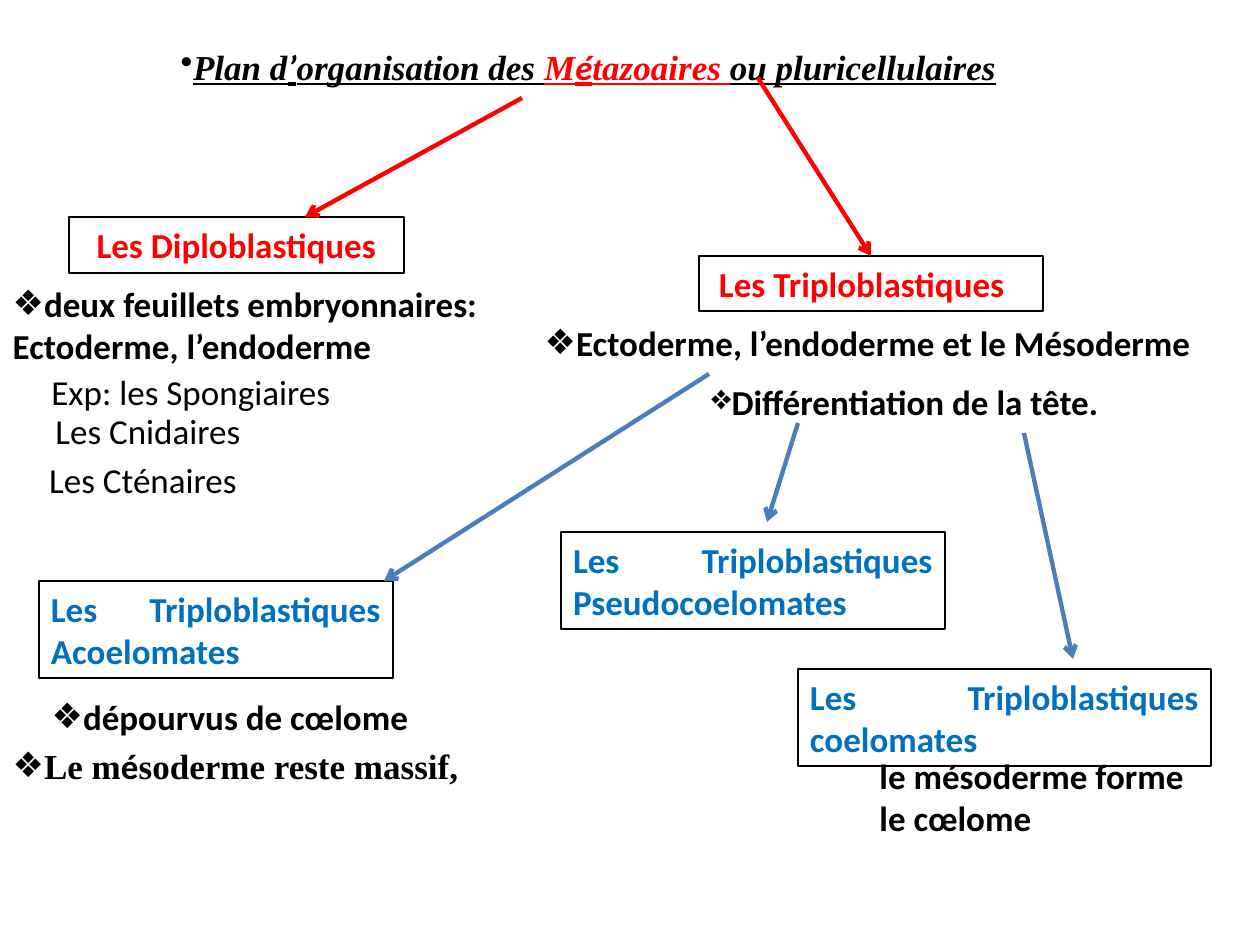
from lxml.etree import SubElement
from pptx import Presentation
from pptx.dml.color import RGBColor
from pptx.enum.shapes import MSO_CONNECTOR, MSO_SHAPE
from pptx.enum.text import MSO_ANCHOR, MSO_AUTO_SIZE, PP_ALIGN
from pptx.oxml.ns import qn
from pptx.util import Emu, Pt

COLORS = {"ink": "000000", "red": "FF0000", "blue": "0070C0",
          "arrow": "4B7EBC", "paper": "FFFFFF"}
SCALE = 914400 / 126
SERIF = "Times New Roman"
SANS = "Calibri"
DIAMOND = "❖"


def px(length):
    return Emu(round(length * SCALE))


def color(name):
    return RGBColor.from_string(COLORS[name])


class SlideBuilder:
    size = Pt(20)

    def __init__(self, page):
        self.page = page

    def set_text(self, box, lines, ink="ink", bold=True, align=PP_ALIGN.LEFT,
                 anchor=MSO_ANCHOR.TOP, wrap=True, bullet=None, decorated=False):
        frame = box.text_frame
        frame.word_wrap = wrap
        frame.auto_size = MSO_AUTO_SIZE.NONE
        frame.vertical_anchor = anchor
        lines = [[(line, ink, SANS)] if isinstance(line, str) else line
                 for line in lines]
        frame.text = "\n".join(spans[0][0] for spans in lines)
        for index, (para, spans) in enumerate(zip(frame.paragraphs, lines)):
            para.alignment = align
            para.line_spacing = 1.0
            para.space_before = para.space_after = Pt(0)
            properties = para._p.get_or_add_pPr()
            properties.set("marL", "0")
            properties.set("indent", "0")
            if bullet and index == 0:
                SubElement(properties, qn("a:buChar")).set("char", bullet)
            else:
                SubElement(properties, qn("a:buNone"))
            for text, _, _ in spans[1:]:
                para.add_run().text = text
            for span, (_, tone, face) in zip(para.runs, spans):
                span.font.name = face
                span.font.size = self.size
                span.font.bold = bold
                span.font.italic = decorated
                span.font.underline = decorated
                span.font.color.rgb = color(tone)
        return box

    def placeholder(self, index, place, lines, **style):
        box = self.page.placeholders[index]
        box.left, box.top, box.width, box.height = map(px, place)
        return self.set_text(box, lines, **style)

    def label(self, place, text, **style):
        box = self.page.shapes.add_textbox(*map(px, place))
        return self.set_text(box, [text], **style)

    def frame(self, place, text, ink="blue", align=PP_ALIGN.JUSTIFY,
              anchor=MSO_ANCHOR.MIDDLE, filled=False, inset=12):
        box = self.page.shapes.add_shape(MSO_SHAPE.RECTANGLE, *map(px, place))
        box.shadow.inherit = False
        if filled:
            box.fill.solid()
            box.fill.fore_color.rgb = color("paper")
        else:
            box.fill.background()
        box.line.color.rgb = color("ink")
        box.line.width = Pt(0.75)
        box.text_frame.margin_left = px(inset)
        return self.set_text(box, [text], ink=ink, align=align, anchor=anchor)

    def arrow(self, start, end, tone="arrow", target=None):
        link = self.page.shapes.add_connector(
            MSO_CONNECTOR.STRAIGHT, *map(px, start + end))
        link.line.color.rgb = color(tone)
        link.line.width = Pt(2.5)
        SubElement(link.line._get_or_add_ln(), qn("a:tailEnd")).set("type", "arrow")
        SubElement(link._element.spPr, qn("a:effectLst"))
        if target is not None:
            link.end_connect(target, 0)


def main():
    deck = Presentation()
    deck.slide_width, deck.slide_height = px(1260), px(945)
    builder = SlideBuilder(deck.slides.add_slide(deck.slide_layouts[4]))

    title = [("Plan d", "ink", SERIF), ("’", "ink", SANS),
             ("organisation des ", "ink", SERIF), ("M", "red", SERIF),
             ("é", "red", SANS), ("tazoaires ", "red", SERIF),
             ("ou pluricellulaires", "ink", SERIF)]
    builder.placeholder(0, (168, 39, 984, 55), [title], bullet="•",
                        anchor=MSO_ANCHOR.MIDDLE, decorated=True)

    massive = [("Le m", "ink", SERIF), ("é", "ink", SANS),
               ("soderme reste massif,", "ink", SERIF)]
    lists = [
        ((0, 276, 501, 98), ["deux feuillets embryonnaires:",
                             "Ectoderme, l’endoderme"]),
        ((532, 315, 679, 55), ["Ectoderme, l’endoderme et le Mésoderme"]),
        ((39, 689, 386, 55), ["dépourvus de cœlome"]),
        ((0, 738, 493, 55), [massive]),
    ]
    for index, (place, lines) in enumerate(lists, start=1):
        builder.placeholder(index, place, lines, bullet=DIAMOND)
    builder.label((699, 374, 436, 55), "Différentiation de la tête.",
                  wrap=False, bullet=DIAMOND)

    builder.frame((69, 217, 335, 56), "Les Diploblastiques", ink="red",
                  align=PP_ALIGN.CENTER, filled=True)
    triploblasts = builder.frame((699, 256, 344, 55), "Les Triploblastiques",
                                 ink="red", align=PP_ALIGN.LEFT, inset=20)
    builder.frame((39, 581, 354, 97), "Les Triploblastiques Acoelomates")
    builder.frame((561, 532, 384, 97), "Les Triploblastiques Pseudocoelomates")
    builder.frame((798, 669, 413, 97), "Les Triploblastiques coelomates")

    builder.label((39, 364, 307, 55), "Exp: les Spongiaires", bold=False, wrap=False)
    for place, text in [((20, 403, 256, 55), "Les Cnidaires"),
                        ((20, 452, 246, 55), "Les Cténaires")]:
        builder.label(place, text, bold=False, align=PP_ALIGN.CENTER,
                      anchor=MSO_ANCHOR.MIDDLE)
    builder.label((867, 748, 344, 97), "le mésoderme forme le cœlome")

    builder.arrow((522, 98), (305, 217), "red")
    builder.arrow((758, 78), (871, 256), "red", triploblasts)
    builder.arrow((709, 374), (384, 581))
    builder.arrow((798, 423), (767, 522))
    builder.arrow((1024, 433), (1073, 659))

    deck.save("out.pptx")


if __name__ == "__main__":
    main()
